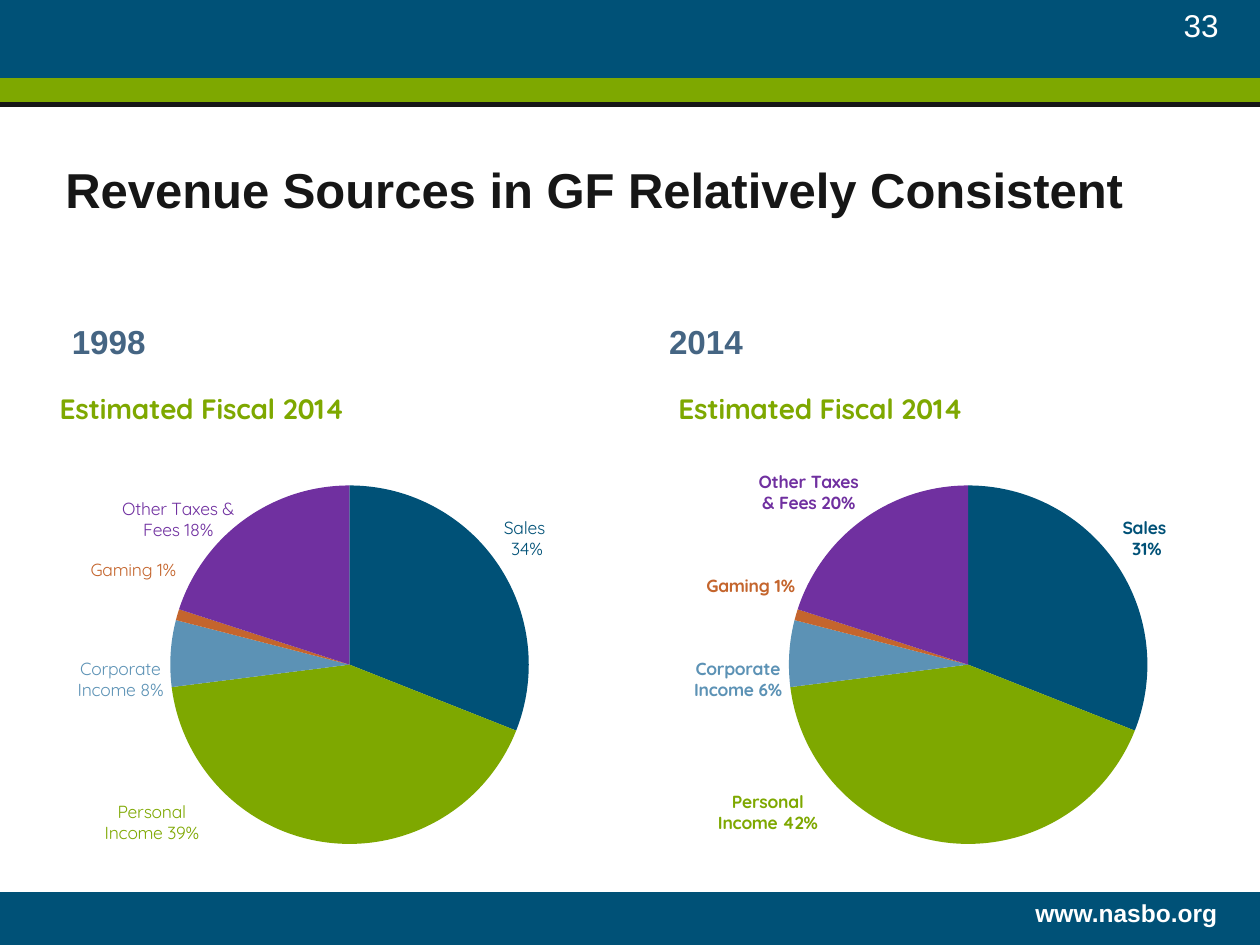
"""Builds the slide comparing general fund revenue sources in two years."""
from dataclasses import dataclass

from lxml.etree import SubElement
from pptx import Presentation
from pptx.chart.data import CategoryChartData
from pptx.dml.color import RGBColor
from pptx.enum.chart import XL_CHART_TYPE, XL_LABEL_POSITION
from pptx.enum.shapes import MSO_CONNECTOR, MSO_SHAPE
from pptx.enum.text import MSO_ANCHOR, PP_ALIGN
from pptx.oxml import parse_xml
from pptx.oxml.ns import qn
from pptx.util import Inches, Pt

NS = 'xmlns:c="http://schemas.openxmlformats.org/drawingml/2006/chart"'
BLUE, GREEN, BLACK, WHITE, SLATE = "005177", "7EA800", "161616", "FFFFFF", "456583"
CHART_TITLE = "Estimated Fiscal 2014"


@dataclass
class Band:
    top: float
    height: float
    color: str


@dataclass
class Label:
    text: str
    left: float
    top: float
    width: float
    height: float
    size: int
    color: str
    bold: bool = True
    align: PP_ALIGN = PP_ALIGN.LEFT
    anchor: MSO_ANCHOR = MSO_ANCHOR.MIDDLE
    inset: float = 0.1


@dataclass
class Source:
    name: str
    share: int
    color: str
    separator: str = " "


@dataclass
class Pie:
    left: float
    bold: bool
    offsets: list[tuple[float, float]]
    captions: list[str]


BANDS = [Band(0, 0.62, BLUE), Band(0.62, 0.21, GREEN), Band(7.08, 0.42, BLUE)]
LABELS = [
    Label("Revenue Sources in GF Relatively Consistent", 0.42, 1.25, 9.17, 0.5, 28, BLACK),
    Label("1998", 0.42, 2.46, 4.42, 0.5, 19, SLATE, inset=0.15),
    Label("2014", 5.16, 2.46, 4.42, 0.5, 19, SLATE, inset=0.15),
    Label("33", 8.94, 0, 0.83, 0.4, 18, WHITE, False, PP_ALIGN.RIGHT, MSO_ANCHOR.BOTTOM),
    Label("www.nasbo.org", 7.59, 7.08, 2.17, 0.41, 14, WHITE, True, PP_ALIGN.RIGHT, MSO_ANCHOR.TOP),
]
SOURCES = [
    Source("Sales ", 31, BLUE, "\n"),
    Source("Personal Income", 42, GREEN),
    Source("Corporate Income", 6, "5C92B5"),
    Source("Gaming", 1, "C4652D"),
    Source("Other Taxes & Fees", 20, "7030A0"),
]
PIES = [
    Pie(0.25, False, [(0, 0), (-0.22, -0.09), (0, 0.05), (0.01, -0.06), (-0.01, 0.05)],
        ["34%", "39%", "8%", "1%", "18%"]),
    Pie(5.16, True, [(0, 0), (-0.22, -0.11), (0, 0.05), (0.01, -0.03), (0, 0)], []),
]


def rgb(color: str) -> RGBColor:
    """Turn a hex string into a colour."""
    return RGBColor.from_string(color)


def style(font, size: int, color: str, bold: bool, name: str = "Arial") -> None:
    """Set the face, size, colour and weight of a font."""
    font.name, font.size, font.bold = name, Pt(size), bold
    font.color.rgb = rgb(color)


def draw_band(s, band: Band) -> None:
    """Draw a full-width colour band."""
    sp = s.shapes.add_shape(MSO_SHAPE.RECTANGLE, 0, Inches(band.top), Inches(10), Inches(band.height))
    sp.shadow.inherit = False
    sp.fill.solid()
    sp.fill.fore_color.rgb = rgb(band.color)
    sp.line.fill.background()


def draw_rule(s, top: float) -> None:
    """Draw the dark rule under the header."""
    line = s.shapes.add_connector(MSO_CONNECTOR.STRAIGHT, 0, Inches(top), Inches(10), Inches(top))
    line.line.color.rgb = rgb(BLACK)
    line.line.width = Pt(3)
    SubElement(line._element.spPr, qn("a:effectLst"))


def draw_label(s, label: Label) -> None:
    """Draw one line of text in a box."""
    sp = s.shapes.add_textbox(Inches(label.left), Inches(label.top), Inches(label.width), Inches(label.height))
    tf = sp.text_frame
    tf.word_wrap = True
    tf.vertical_anchor = label.anchor
    tf.margin_left = Inches(label.inset)
    p = tf.paragraphs[0]
    p.alignment = label.align
    r = p.add_run()
    r.text = label.text
    style(r.font, label.size, label.color, label.bold)


def place(parent, index: int, **values: float) -> None:
    """Give a chart part a manual layout."""
    for old in parent.findall(qn("c:layout")):
        parent.remove(old)
    target = '<c:layoutTarget val="inner"/>' if "w" in values else ""
    modes = "" if parent.tag == qn("c:dLbl") else '<c:xMode val="edge"/><c:yMode val="edge"/>'
    sizes = "".join(f'<c:{key} val="{value}"/>' for key, value in values.items())
    xml = f"<c:layout {NS}><c:manualLayout>{target}{modes}{sizes}</c:manualLayout></c:layout>"
    parent.insert(index, parse_xml(xml))


def show_name_and_percent(element, separator: str) -> None:
    """Make data labels show category and percentage."""
    for tag, value in (("showVal", "0"), ("showCatName", "1"), ("showPercent", "1")):
        element.find(qn(f"c:{tag}")).set("val", value)
    node = parse_xml(f"<c:separator {NS}/>")
    node.text = separator
    element.find(qn("c:showPercent")).getparent().insert(
        list(element).index(element.find(qn("c:showBubbleSize"))) + 1 if element.find(qn("c:showBubbleSize")) is not None
        else list(element).index(element.find(qn("c:showPercent"))) + 1, node)


def label_slice(point, index: int, source: Source, pie: Pie) -> None:
    """Colour one slice and set its label."""
    point.format.fill.solid()
    point.format.fill.fore_color.rgb = rgb(source.color)
    label = point.data_label
    if pie.captions:
        tf = label.text_frame
        caption = f"{source.name}{source.separator}{pie.captions[index]}"
        for number, text in enumerate(caption.split("\n")):
            p = tf.add_paragraph() if number else tf.paragraphs[0]
            r = p.add_run()
            r.text = text
            style(r.font, 10, source.color, pie.bold, "Quicksand")
    else:
        style(label.font, 10, source.color, pie.bold, "Quicksand")
    label.position = XL_LABEL_POSITION.OUTSIDE_END
    element = point._ser.find(qn("c:dLbls")).findall(qn("c:dLbl"))[index]
    show_name_and_percent(element, source.separator)
    x, y = pie.offsets[index]
    if x or y:
        place(element, 1, x=x, y=y)


def draw_pie(s, pie: Pie) -> None:
    """Draw a titled pie chart of the revenue sources."""
    data = CategoryChartData()
    data.categories = [source.name for source in SOURCES]
    data.add_series(CHART_TITLE, [source.share for source in SOURCES])
    chart = s.shapes.add_chart(XL_CHART_TYPE.PIE, Inches(pie.left), Inches(2.96), Inches(4.59), Inches(4.25), data).chart
    style(chart.font, 16, BLUE, True, "Quicksand")
    chart.has_legend = False
    chart.has_title = True
    r = chart.chart_title.text_frame.paragraphs[0].add_run()
    r.text = CHART_TITLE
    style(r.font, 16, GREEN, True, "Quicksand")
    place(chart.chart_title._element, 1, x=0.04, y=0.02)
    place(chart._chartSpace.chart.plotArea, 0, x=0.24, y=0.21, w=0.62, h=0.67)
    plot = chart.plots[0]
    plot.vary_by_categories = True
    series = plot.series[0]
    labels = series.data_labels
    labels.show_value, labels.show_category_name, labels.show_percentage = False, True, True
    labels.position = XL_LABEL_POSITION.OUTSIDE_END
    style(labels.font, 10, BLUE, pie.bold, "Quicksand")
    for leader in labels._element.findall(qn("c:showLeaderLines")):
        leader.set("val", "0")
    for index, source in enumerate(SOURCES):
        label_slice(series.points[index], index, source, pie)


def main() -> None:
    """Build and save the slide."""
    prs = Presentation()
    prs.slide_width, prs.slide_height = Inches(10), Inches(7.5)
    s = prs.slides.add_slide(prs.slide_layouts[6])
    for band in BANDS:
        draw_band(s, band)
    draw_rule(s, 0.83)
    for label in LABELS:
        draw_label(s, label)
    for pie in PIES:
        draw_pie(s, pie)
    prs.save("out.pptx")


if __name__ == "__main__":
    main()
